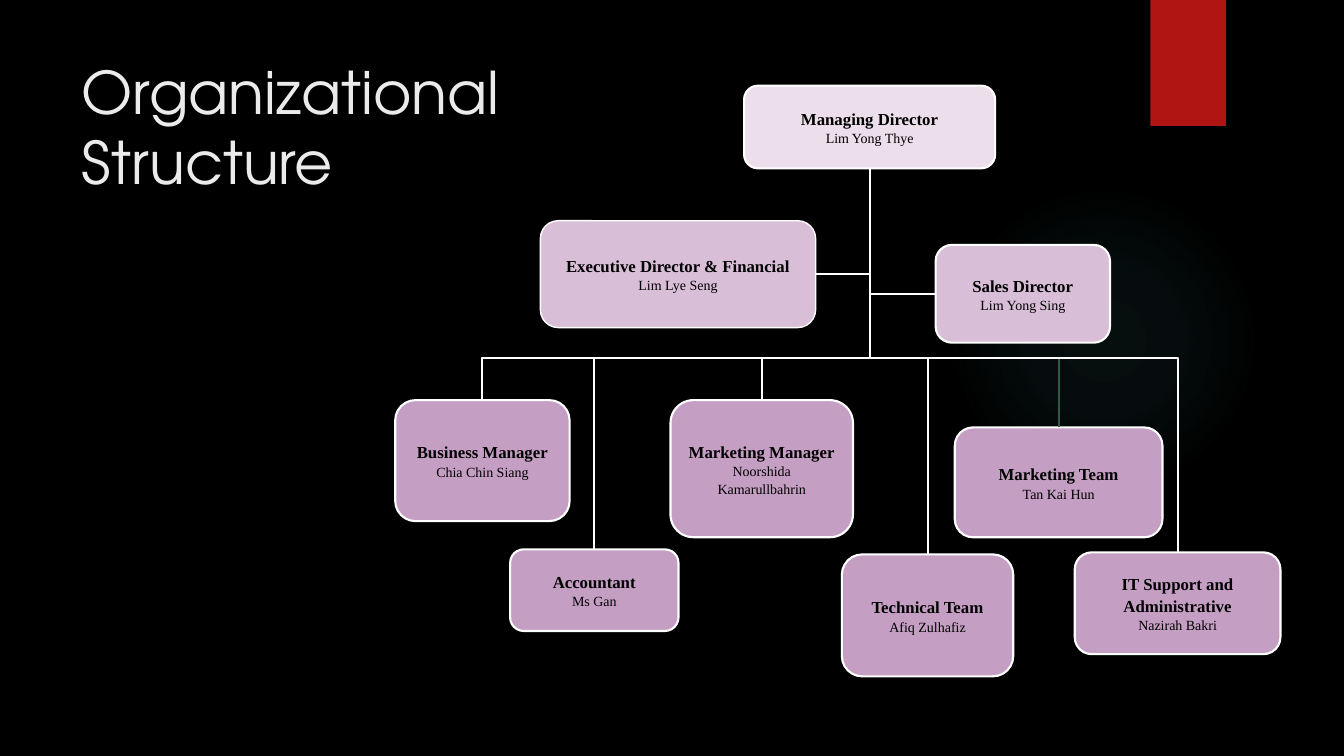
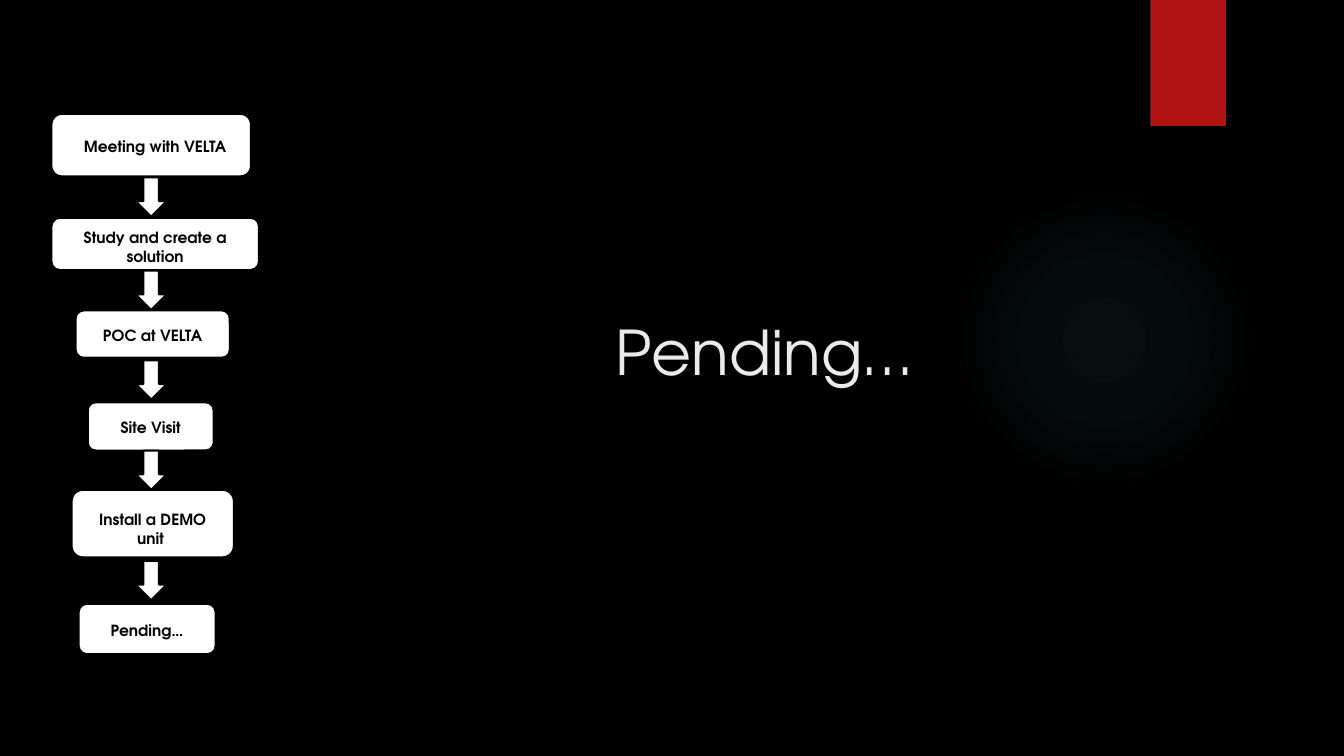
import dataclasses

import lxml.etree
import pptx
import pptx.dml.color
import pptx.enum.shapes
import pptx.enum.text
import pptx.oxml
import pptx.oxml.ns
import pptx.util

Inches = pptx.util.Inches
Pt = pptx.util.Pt
KIND = pptx.enum.shapes.MSO_SHAPE
LINK = pptx.enum.shapes.MSO_CONNECTOR
ALIGN = pptx.enum.text.PP_ALIGN
ANCHOR = pptx.enum.text.MSO_ANCHOR
qn = pptx.oxml.ns.qn


@dataclasses.dataclass(frozen=True)
class Theme:
    back: str = "000000"
    tab: str = "B01513"
    glow: str = "50B9C1"
    title: str = "EBEBEB"
    ink: str = "000000"
    white: str = "FFFFFF"
    green: str = "325948"
    head: str = "ECDFEB"
    board: str = "D9BED7"
    staff: str = "C59EC3"
    sans: str = "TeX Gyre Adventor"
    serif: str = "Times New Roman"
    role: float = 12
    name: float = 10
    step: float = 11
    line: float = 1.5


T = Theme()

# Role, holder, fill, line width, place inside the chart box
HEAD = ("Managing Director", "Lim Yong Thye", T.head, T.line,
        (3.48, 0, 2.49, 0.82))
BOARD = [
    ("Executive Director & Financial", "Lim Lye Seng", T.board, 1,
     (1.46, 1.34, 2.73, 1.06)),
    ("Sales Director", "Lim Yong Sing", T.board, T.line,
     (5.38, 1.58, 1.73, 0.97)),
]
STAFF = [
    ("Business Manager", "Chia Chin Siang", (0.02, 3.12, 1.73, 1.2)),
    ("Accountant", "Ms Gan", (1.16, 4.6, 1.67, 0.81)),
    ("Marketing Manager", "Noorshida Kamarullbahrin",
     (2.75, 3.12, 1.81, 1.36)),
    ("Technical Team", "Afiq Zulhafiz", (4.45, 4.65, 1.7, 1.21)),
    ("Marketing Team", "Tan Kai Hun", (5.57, 3.39, 2.06, 1.09)),
    ("IT Support and Administrative", "Nazirah Bakri",
     (6.76, 4.63, 2.04, 1.01)),
]
BUS = 2.7  # height of the shared line inside the chart box

# Label, place inside the flow box, shift of the label
STEPS = [
    ("Meeting with VELTA", (0.01, 0, 1.98, 0.62), (0.04, 0.01)),
    ("Study and create a solution", (0.01, 1.03, 2.06, 0.52), (0, 0.03)),
    ("POC at VELTA", (0.25, 1.95, 1.53, 0.47), (0, 0.01)),
    ("Site Visit", (0.37, 2.86, 1.25, 0.48), (0, 0.01)),
    ("Install a DEMO unit ", (0.21, 3.73, 1.61, 0.67), (0, 0.05)),
    ("Pending…", (0.28, 4.86, 1.36, 0.5), (0, 0.01)),
]


def rgb(tone):
    return pptx.dml.color.RGBColor.from_string(tone)


def shift(box, part):
    """Move a part's place into the box that holds it."""
    return (box[0] + part[0], box[1] + part[1], part[2], part[3])


def shape(slide, kind, box, fill, edge=None, width=T.line):
    item = slide.shapes.add_shape(kind, *map(Inches, box))
    item.shadow.inherit = False
    item.fill.solid()
    item.fill.fore_color.rgb = rgb(fill)
    if edge:
        item.line.color.rgb = rgb(edge)
        item.line.width = Pt(width)
    else:
        item.line.fill.background()
    return item


def write(para, text, face, size, tone, bold=False):
    run = para.add_run()
    run.text = text
    font = run.font
    font.name, font.size, font.bold = face, Pt(size), bold
    font.color.rgb = rgb(tone)


def elbow(slide, start, end, kind, turn, tone=T.white):
    """Add a bent line whose frame is turned; return its geometry."""
    line = slide.shapes.add_connector(
        LINK.ELBOW, *map(Inches, start + end))
    line.line.color.rgb = rgb(tone)
    line.line.width = Pt(T.line)
    props = line._element.spPr
    lxml.etree.SubElement(props, qn("a:effectLst"))
    if turn:
        props.find(qn("a:xfrm")).set("rot", str(turn * 60000))
    form = props.find(qn("a:prstGeom"))
    form.set("prst", kind)
    return form


def rise(slide, start, end, bus, tone):
    """Go up from a card to the bus, along it, and up to the head."""
    (x, y), (top_x, top_y) = start, end
    mid_x, mid_y = (x + top_x) / 2, (y + top_y) / 2
    left = x < top_x
    dx = (y - top_y) / 2 * (1 if left else -1)
    dy = abs(x - top_x) / 2
    form = elbow(slide, (mid_x + dx, mid_y + dy), (mid_x - dx, mid_y - dy),
                 "bentConnector3", 90 if left else 270, tone)
    guides = form.find(qn("a:avLst"))
    if guides is None:
        guides = lxml.etree.SubElement(form, qn("a:avLst"))
    ratio = round((y - bus) / (y - top_y) * 100000)
    lxml.etree.SubElement(guides, qn("a:gd"), name="adj1",
                          fmla=f"val {ratio}")


def side(slide, start, end):
    """Go sideways from a card to the trunk and up to the head."""
    (x, y), (top_x, top_y) = start, end
    if x < top_x:
        elbow(slide, start, end, "bentConnector2", 0)
    else:
        elbow(slide, (top_x, top_y), (x, y), "bentConnector2", 180)


def glow(slide, box):
    disc = shape(slide, KIND.OVAL, box, T.glow)
    stops = "".join(
        f'<a:gs pos="{pos * 1000}"><a:srgbClr val="{T.glow}">'
        f'<a:alpha val="{alpha * 1000}"/></a:srgbClr></a:gs>'
        for pos, alpha in ((0, 7), (36, 6), (69, 0), (100, 0)))
    grad = pptx.oxml.parse_xml(
        f'<a:gradFill {pptx.oxml.ns.nsdecls("a")} rotWithShape="1">'
        f'<a:gsLst>{stops}</a:gsLst><a:path path="circle">'
        '<a:fillToRect l="50000" t="50000" r="50000" b="50000"/>'
        '</a:path></a:gradFill>')
    props = disc._element.spPr
    props.replace(props.find(qn("a:solidFill")), grad)


def frame(deck, lines, box, size):
    """Add a slide with the shared backdrop and its title."""
    slide = deck.slides.add_slide(deck.slide_layouts[6])
    slide.background.fill.solid()
    slide.background.fill.fore_color.rgb = rgb(T.back)
    glow(slide, (9.41, 1.83, 3.08, 3.08))
    shape(slide, KIND.RECTANGLE, (11.41, 0, 0.75, 1.25), T.tab)
    text = slide.shapes.add_textbox(*map(Inches, box)).text_frame
    text.word_wrap = True
    para = text.paragraphs[0]
    for i, line in enumerate(lines):
        if i:
            para.add_line_break()
        write(para, line, T.sans, size, T.title)
    return slide


def card(slide, box, role, name, fill, width, part):
    item = shape(slide, KIND.ROUNDED_RECTANGLE, shift(box, part),
                 fill, T.white, width)
    text = item.text_frame
    text.word_wrap = True
    text.vertical_anchor = ANCHOR.MIDDLE
    para = text.paragraphs[0]
    para.alignment = ALIGN.CENTER
    para.line_spacing = 1.06
    para.space_after = Pt(8)
    write(para, role, T.serif, T.role, T.ink, True)
    para.add_line_break()
    write(para, name, T.serif, T.name, T.ink)


def chart(slide, box):
    card(slide, box, *HEAD)
    x, y, w, h = shift(box, HEAD[-1])
    root = (x + w / 2, y + h)

    # Staff, joined through the shared line
    for role, name, part in STAFF:
        card(slide, box, role, name, T.staff, T.line, part)
        x, y, w, h = shift(box, part)
        tone = T.green if role == "Marketing Team" else T.white
        rise(slide, (x + w / 2, y), root, box[1] + BUS, tone)

    # Directors at the sides of the trunk
    for entry in BOARD:
        card(slide, box, *entry)
        x, y, w, h = shift(box, entry[-1])
        side(slide, (x + w if x < root[0] else x, y + h / 2), root)


def flow(slide, box):
    # Steps
    for label, part, (right, down) in STEPS:
        item = shape(slide, KIND.ROUNDED_RECTANGLE, shift(box, part),
                     T.white, T.ink)
        text = item.text_frame
        text.word_wrap = True
        text.vertical_anchor = ANCHOR.MIDDLE
        text.margin_left = Inches(0.1 + 2 * right)
        text.margin_top = Inches(0.05 + 2 * down)
        para = text.paragraphs[0]
        para.alignment = ALIGN.CENTER
        write(para, label, T.sans, T.step, T.ink, True)

    # Arrows, each centred in the gap between two steps
    wide, tall = 0.31, 0.39
    for (_, above, _), (_, below, _) in zip(STEPS, STEPS[1:]):
        middle = (above[1] + above[3] + below[1]) / 2
        part = (1 - wide / 2, middle - tall / 2, wide, tall)
        shape(slide, KIND.DOWN_ARROW, shift(box, part), T.white, T.ink)


def main():
    deck = pptx.Presentation()
    deck.slide_width, deck.slide_height = Inches(13.33), Inches(7.5)
    chart(frame(deck, ["Organizational", "Structure"],
                (0.71, 0.5, 10.29, 1.53), 42),
          (3.9, 0.85, 8.8, 5.86))
    flow(frame(deck, ["Pending…"], (6.01, 3.07, 3.85, 1.53), 44),
         (0.5, 1.13, 2.07, 5.36))
    deck.save("out.pptx")


if __name__ == "__main__":
    main()
